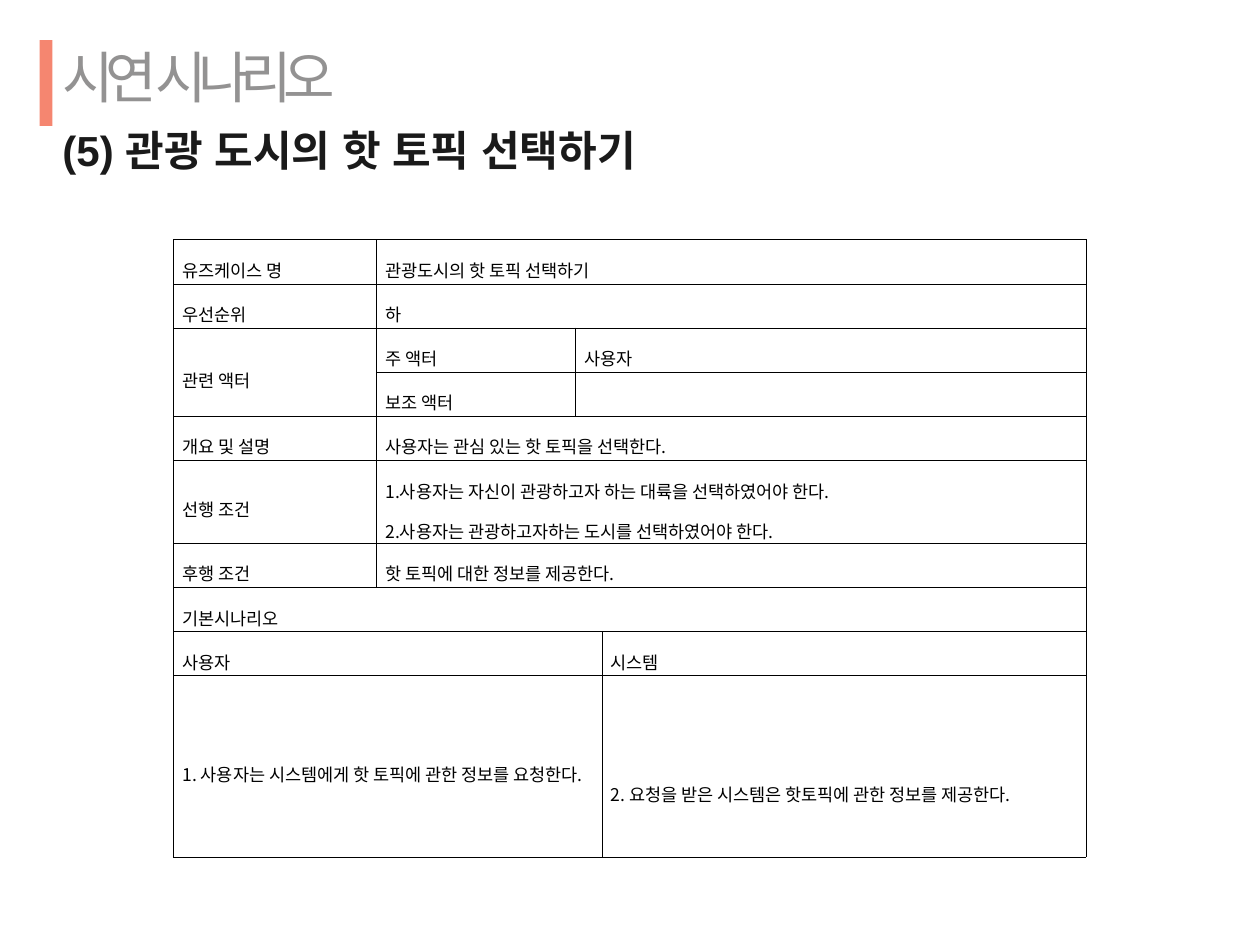
import pptx
import pptx.dml.color
import pptx.enum.shapes
import pptx.enum.text
import pptx.oxml
import pptx.oxml.ns
import pptx.util
from pptx.util import Cm

COLORS = {"accent": "F58670", "title": "939292", "heading": "1A1A1A", "table": "000000"}
TITLE_FONT, TABLE_FONT = "Arial", "Noto Sans CJK KR"

COLUMNS = [4.09, 4.01, 0.53, 9.76]
ROW, TALL_ROW, SCENARIO_ROW = 0.89, 1.67, 3.66
ROWS = [ROW] * 5 + [TALL_ROW] + [ROW] * 3 + [SCENARIO_ROW]

# (row, column, rows spanned, columns spanned, text)
CELLS = [
    (0, 0, 1, 1, "유즈케이스 명"),
    (0, 1, 1, 3, "관광도시의 핫 토픽 선택하기"),
    (1, 0, 1, 1, "우선순위"),
    (1, 1, 1, 3, "하"),
    (2, 0, 2, 1, "관련 액터"),
    (2, 1, 1, 1, "주 액터"),
    (2, 2, 1, 2, "사용자"),
    (3, 1, 1, 1, "보조 액터"),
    (3, 2, 1, 2, ""),
    (4, 0, 1, 1, "개요 및 설명"),
    (4, 1, 1, 3, "사용자는 관심 있는 핫 토픽을 선택한다."),
    (5, 0, 1, 1, "선행 조건"),
    (5, 1, 1, 3, "1.사용자는 자신이 관광하고자 하는 대륙을 선택하였어야 한다.\n"
                 "2.사용자는 관광하고자하는 도시를 선택하였어야 한다."),
    (6, 0, 1, 1, "후행 조건"),
    (6, 1, 1, 3, "핫 토픽에 대한 정보를 제공한다."),
    (7, 0, 1, 4, "기본시나리오"),
    (8, 0, 1, 3, "사용자"),
    (8, 3, 1, 1, "시스템"),
    (9, 0, 1, 3, "1. 사용자는 시스템에게 핫 토픽에 관한 정보를 요청한다."),
    (9, 3, 1, 1, "2. 요청을 받은 시스템은 핫토픽에 관한 정보를 제공한다."),
]


def rgb(name):
    return pptx.dml.color.RGBColor.from_string(COLORS[name])


class SlideBuilder:
    def __init__(self, slide):
        self.slide = slide

    def style(self, p, size, font, color, bold=False, spacing=0):
        """Set the paragraph font for Latin and Korean text; spacing is in points."""
        p.font.size = pptx.util.Pt(size)
        p.font.bold = bold
        p.font.color.rgb = rgb(color)
        p.font.name = font
        props = p._p.get_or_add_pPr().find(pptx.oxml.ns.qn("a:defRPr"))
        props.set("spc", str(spacing * 100))
        ea = pptx.oxml.parse_xml(f'<a:ea {pptx.oxml.ns.nsdecls("a")} typeface="{font}"/>')
        props.find(pptx.oxml.ns.qn("a:latin")).addnext(ea)

    def bar(self, left, top, width, height):
        sp = self.slide.shapes.add_shape(
            pptx.enum.shapes.MSO_SHAPE.RECTANGLE, Cm(left), Cm(top), Cm(width), Cm(height))
        sp.shadow.inherit = False
        sp.fill.solid()
        sp.fill.fore_color.rgb = rgb("accent")
        sp.line.fill.background()

    def text(self, left, top, width, height, lines):
        """Add a text box; each line is its text and the arguments for style."""
        tf = self.slide.shapes.add_textbox(Cm(left), Cm(top), Cm(width), Cm(height)).text_frame
        tf.word_wrap = True
        tf.margin_left = tf.margin_right = tf.margin_top = tf.margin_bottom = 0
        tf.text = "\n".join(line for line, _ in lines)
        for p, (_, look) in zip(tf.paragraphs, lines):
            p.line_spacing = pptx.util.Pt(37)
            self.style(p, **look)

    def border(self, cell):
        props = cell._tc.get_or_add_tcPr()
        for index, side in enumerate(("lnL", "lnR", "lnT", "lnB")):
            props.insert(index, pptx.oxml.parse_xml(
                f'<a:{side} {pptx.oxml.ns.nsdecls("a")} w="3556"><a:solidFill>'
                f'<a:srgbClr val="{COLORS["table"]}"/></a:solidFill></a:{side}>'))

    def table(self, left, top, columns, rows, cells):
        table = self.slide.shapes.add_table(
            len(rows), len(columns), Cm(left), Cm(top), Cm(sum(columns)), Cm(sum(rows))).table
        table.first_row = table.horz_banding = False
        for column, width in zip(table.columns, columns):
            column.width = Cm(width)
        for row, height in zip(table.rows, rows):
            row.height = Cm(height)
        for cell in table.iter_cells():
            cell.fill.background()
            cell.vertical_anchor = pptx.enum.text.MSO_ANCHOR.MIDDLE
            cell.margin_left = cell.margin_right = Cm(0.18)
            cell.margin_top = cell.margin_bottom = Cm(0.05)
            self.border(cell)
        for row, column, height, width, text in cells:
            cell = table.cell(row, column)
            if height * width > 1:
                cell.merge(table.cell(row + height - 1, column + width - 1))
            cell.text = text
            for p in cell.text_frame.paragraphs:
                p.alignment = pptx.enum.text.PP_ALIGN.JUSTIFY
                p.line_spacing = 1.6 if text else 1.0
                self.style(p, 10, TABLE_FONT, "table")
        return table


def main():
    prs = pptx.Presentation()
    prs.slide_width, prs.slide_height = Cm(25.4), Cm(19.05)
    s = SlideBuilder(prs.slides.add_slide(prs.slide_layouts[6]))
    s.bar(0.8, 0.81, 0.26, 1.73)
    s.text(1.26, 0.91, 16.7, 6.58, [
        ("시연 시나리오", dict(size=32, font=TITLE_FONT, color="title", spacing=-5)),
        ("(5) 관광 도시의 핫 토픽 선택하기",
         dict(size=24, font=TITLE_FONT, color="heading", bold=True)),
    ])
    table = s.table(3.5, 4.83, COLUMNS, ROWS, CELLS)
    # The system's reply sits lower than the user's request.
    table.cell(9, 3).margin_top = Cm(0.86)
    prs.save("out.pptx")


if __name__ == "__main__":
    main()
